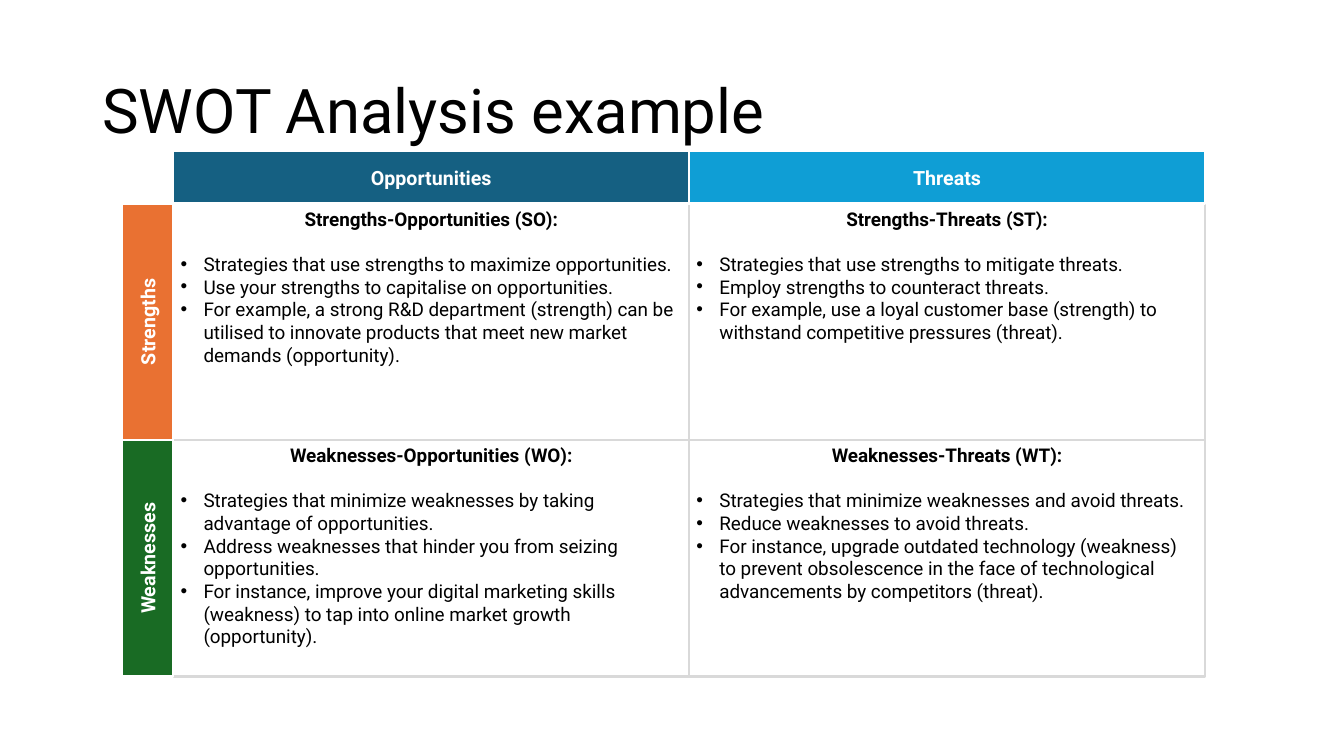
from dataclasses import dataclass

from lxml.etree import SubElement
from pptx import Presentation
from pptx.dml.color import RGBColor
from pptx.enum.shapes import MSO_SHAPE
from pptx.enum.text import MSO_ANCHOR, PP_ALIGN
from pptx.oxml.ns import qn
from pptx.shapes.autoshape import Shape
from pptx.slide import Slide
from pptx.text.text import TextFrame, _Paragraph
from pptx.util import Cm, Pt

COLORS = {
    "text": "000000",
    "white": "FFFFFF",
    "grid": "D9D9D9",
    "opportunities": "156082",
    "threats": "0F9ED5",
    "strengths": "E97132",
    "weaknesses": "196B24",
}
FONT = "Roboto"
GRID_LEFT, GRID_TOP = 4.37, 5.13
COLUMN_WIDTH, ROW_HEIGHT = 13.0, 5.96
HEADER_HEIGHT, SIDE_WIDTH = 1.32, 1.3
BULLET_INDENT = Cm(0.58)
BOX_FORMAT = {
    "word_wrap": True,
    "margin_left": Cm(0.18),
    "margin_right": Cm(0.18),
    "margin_top": Cm(0.1),
    "margin_bottom": Cm(0.1),
}


@dataclass(frozen=True)
class Factor:
    label: str
    color: str


@dataclass(frozen=True)
class Strategy:
    heading: str
    points: tuple[str, ...]


EXTERNAL = (Factor("Opportunities", "opportunities"), Factor("Threats", "threats"))
INTERNAL = (Factor("Strengths", "strengths"), Factor("Weaknesses", "weaknesses"))
STRATEGIES = (
    (
        Strategy("Strengths-Opportunities (SO):", (
            "Strategies that use strengths to maximize opportunities.",
            "Use your strengths to capitalise on opportunities.",
            "For example, a strong R&D department (strength) can be utilised to "
            "innovate products that meet new market demands (opportunity).",
        )),
        Strategy("Strengths-Threats (ST):", (
            "Strategies that use strengths to mitigate threats.",
            "Employ strengths to counteract threats.",
            "For example, use a loyal customer base (strength) to withstand "
            "competitive pressures (threat).",
        )),
    ),
    (
        Strategy("Weaknesses-Opportunities (WO):", (
            "Strategies that minimize weaknesses by taking advantage of opportunities.",
            "Address weaknesses that hinder you from seizing opportunities.",
            "For instance, improve your digital marketing skills (weakness) to tap "
            "into online market growth (opportunity).",
        )),
        Strategy("Weaknesses-Threats (WT):", (
            "Strategies that minimize weaknesses and avoid threats.",
            "Reduce weaknesses to avoid threats.",
            "For instance, upgrade outdated technology (weakness) to prevent "
            "obsolescence in the face of technological advancements by competitors "
            "(threat).",
        )),
    ),
)


def rgb(name: str) -> RGBColor:
    return RGBColor.from_string(COLORS[name])


def apply_format(target: object, values: dict) -> None:
    for attribute, value in values.items():
        setattr(target, attribute, value)


def write(paragraph: _Paragraph, text: str, size: float, color: str,
          bold: bool, align: PP_ALIGN) -> None:
    paragraph.alignment = align
    run = paragraph.add_run()
    run.text = text
    apply_format(run.font, {"name": FONT, "size": Pt(size), "bold": bold})
    run.font.color.rgb = rgb(color)


def add_bullet(paragraph: _Paragraph) -> None:
    properties = paragraph._p.get_or_add_pPr()
    properties.set("marL", str(BULLET_INDENT))
    properties.set("indent", str(-BULLET_INDENT))
    SubElement(properties, qn("a:buFont"), typeface="Arial")
    SubElement(properties, qn("a:buChar"), char="•")


def add_box(slide: Slide, left: float, top: float, width: float, height: float,
            line: str, anchor: MSO_ANCHOR) -> Shape:
    box = slide.shapes.add_shape(
        MSO_SHAPE.RECTANGLE, Cm(left), Cm(top), Cm(width), Cm(height))
    box.shadow.inherit = False
    box.fill.background()
    box.line.color.rgb = rgb(line)
    box.line.width = Pt(1.5)
    apply_format(box.text_frame, BOX_FORMAT | {"vertical_anchor": anchor})
    return box


def add_strategy(slide: Slide, strategy: Strategy, left: float, top: float) -> None:
    cell = add_box(slide, left, top, COLUMN_WIDTH, ROW_HEIGHT, "grid", MSO_ANCHOR.TOP)
    frame: TextFrame = cell.text_frame
    heading = frame.paragraphs[0]
    write(heading, strategy.heading, 13.5, "text", True, PP_ALIGN.CENTER)
    heading.space_after = Pt(16)
    for point in strategy.points:
        item = frame.add_paragraph()
        write(item, point, 13.5, "text", False, PP_ALIGN.LEFT)
        add_bullet(item)


def add_factor(slide: Slide, factor: Factor, left: float, top: float,
               width: float, height: float) -> Shape:
    """Draw one coloured row or column header."""
    header = add_box(slide, left, top, width, height, "white", MSO_ANCHOR.MIDDLE)
    header.fill.solid()
    header.fill.fore_color.rgb = rgb(factor.color)
    write(header.text_frame.paragraphs[0], factor.label, 14, "white", True,
          PP_ALIGN.CENTER)
    return header


def add_title(slide: Slide, text: str) -> None:
    title = slide.shapes.add_textbox(Cm(2.33), Cm(1.01), Cm(29.21), Cm(3.68))
    apply_format(title.text_frame,
                 {"word_wrap": True, "vertical_anchor": MSO_ANCHOR.MIDDLE})
    paragraph = title.text_frame.paragraphs[0]
    write(paragraph, text, 44, "text", False, PP_ALIGN.LEFT)
    paragraph.line_spacing = 0.9


def main() -> None:
    deck = Presentation()
    apply_format(deck, {"slide_width": Cm(33.87), "slide_height": Cm(19.05)})
    slide = deck.slides.add_slide(deck.slide_layouts[6])
    add_title(slide, "SWOT Analysis example")

    column_lefts = [GRID_LEFT + i * COLUMN_WIDTH for i in range(len(EXTERNAL))]
    row_tops = [GRID_TOP + i * ROW_HEIGHT for i in range(len(INTERNAL))]
    for top, row in zip(row_tops, STRATEGIES):
        for left, strategy in zip(column_lefts, row):
            add_strategy(slide, strategy, left, top)
    for left, factor in zip(column_lefts, EXTERNAL):
        add_factor(slide, factor, left, GRID_TOP - HEADER_HEIGHT,
                   COLUMN_WIDTH, HEADER_HEIGHT)
    for top, factor in zip(row_tops, INTERNAL):
        side = add_factor(slide, factor, GRID_LEFT - SIDE_WIDTH, top,
                          SIDE_WIDTH, ROW_HEIGHT)
        side.text_frame._txBody.bodyPr.set("vert", "vert270")

    deck.save("out.pptx")


if __name__ == "__main__":
    main()
